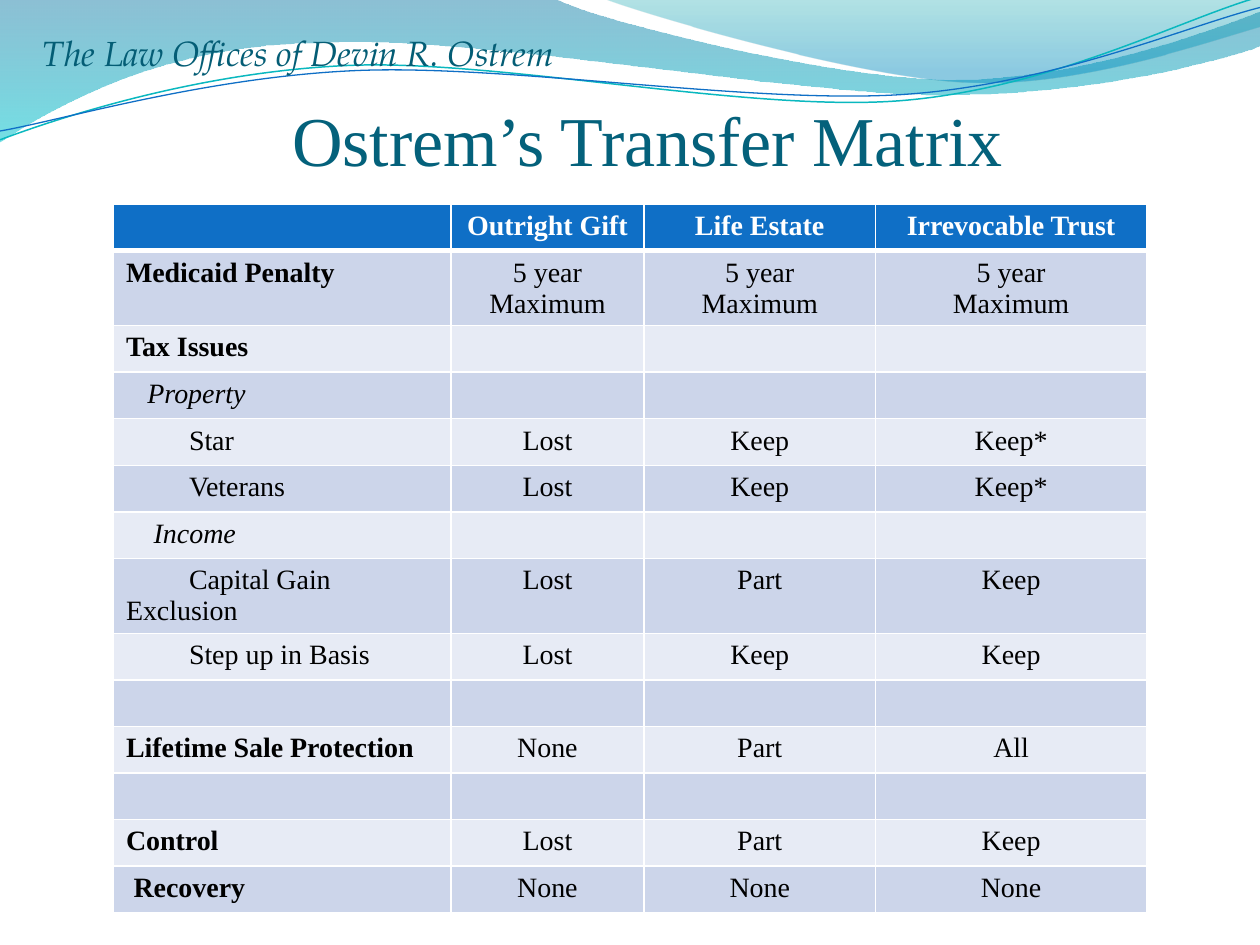
"""Builds a slide with a transfer matrix table under a wave header."""
from math import cos, radians, sin

from lxml.etree import SubElement
from pptx import Presentation
from pptx.dml.color import RGBColor
from pptx.enum.text import MSO_ANCHOR as Anchor, MSO_AUTO_SIZE as AutoSize, PP_ALIGN as Align
from pptx.oxml.ns import qn
from pptx.util import Inches, Pt


def rgb(value):
    return RGBColor.from_string(value)


def add_wave(shapes, start, segments, closed, tilt=0, center=(0, 0)):
    """Draw straight (1 point) and cubic (3 point) segments as one freeform."""
    angle, (cx, cy) = radians(-tilt), center
    points = [(1000 * (cx + (x - cx) * cos(angle) - (y - cy) * sin(angle)),
               1000 * (cy + (x - cx) * sin(angle) + (y - cy) * cos(angle)))
              for x, y in [start, *(point for segment in segments for point in segment)]]
    builder = shapes.build_freeform(*points[0], scale=Inches(1) / 1000)
    builder.add_line_segments(points[1:], close=closed)
    wave = builder.convert_to_shape()
    lines = iter(list(wave._element.iter(qn("a:lnTo"))))
    for segment in segments:
        first = next(lines)
        if len(segment) == 3:
            first.tag = qn("a:cubicBezTo")
            for control in (next(lines), next(lines)):
                first.append(control[0])
                control.getparent().remove(control)
    wave.rotation = tilt
    wave.shadow.inherit = False
    return wave


prs = Presentation()
prs.slide_width, prs.slide_height = Inches(10), Inches(7.5)
slide = prs.slides.add_slide(prs.slide_layouts[5])
shapes = slide.shapes

bands = [
    ((0, -0.01), [
        [(4.4, -0.01)], [(4.76, 0.17), (6.64, 0.63), (7.58, 0.63)],
        [(8.53, 0.63), (9.58, 0.26), (10, 0.09)], [(10.01, 0.36)],
        [(9.83, 0.44), (8.7, 0.76), (7.46, 0.75)],
        [(6.22, 0.75), (3.82, 0.28), (2.57, 0.34)],
        [(1.29, 0.35), (0.46, 0.83), (-0.01, 1.13)], [(0, -0.01)],
    ], [(0, "0074A1", 45), (1, "00C6CF", 55)]),
    ((4.79, -0.01), [
        [(5.09, 0.11), (6.82, 0.62), (7.69, 0.65)],
        [(8.56, 0.69), (9.61, 0.32), (10, 0.21)], [(10, 0)], [(4.79, -0.01)],
    ], [(0, "00A1A9", 30), (0.8, "008BBF", 45)]),
]
for start, segments, stops in bands:
    band = add_wave(shapes, start, segments, True)
    band.line.fill.background()
    band.fill.gradient()
    band.fill.gradient_angle = 270
    for stop, (position, color, _) in zip(band.fill.gradient_stops, stops):
        stop.position = position
        stop.color.rgb = rgb(color)
    colors = band._element.spPr.iter(qn("a:srgbClr"))
    for element, (_, _, opacity) in zip(list(colors), stops):
        SubElement(element, qn("a:alpha")).set("val", str(opacity * 1000))

strands = [
    ((0, 1.11), [[(0.48, 0.93), (1.58, 0.57), (2.77, 0.52)],
                 [(3.95, 0.47), (5.93, 0.89), (7.13, 0.8)],
                 [(8.33, 0.71), (9.38, 0.15), (9.98, -0.02)]], (4.99, 0.58), "0AB8BF", 0.85),
    ((0, 1.04), [[(0.47, 0.96), (1.64, 0.61), (2.83, 0.56)],
                 [(4.03, 0.51), (5.97, 0.83), (7.17, 0.75)],
                 [(8.36, 0.67), (9.41, 0.21), (10, 0.06)]], (5, 0.59), "0F6FC6", 0.75),
]
for start, segments, center, color, width in strands:
    strand = add_wave(shapes, start, segments, False, -2.7, center)
    strand.fill.background()
    strand.line.color.rgb = rgb(color)
    strand.line.width = Pt(width)

title = shapes.title
shapes._spTree.append(title._element)
title.left, title.top, title.width, title.height = map(Inches, (1.32, 0.71, 7.42, 0.75))
title.text_frame.text = "Ostrem’s Transfer Matrix"
firm = shapes.add_textbox(Inches(0.2), Inches(0.1), Inches(4.83), Inches(0.48))
firm.text_frame.text = "The Law Offices of Devin R. Ostrem"
for heading, indent, bottom, name, size, color, italic in (
    (title, 1, 0.03, "Times New Roman", 40, "04617B", False),
    (firm, 0.14, 0, "TeX Gyre Pagella", 20, "045D75", True),
):
    frame = heading.text_frame
    frame.word_wrap, frame.auto_size = True, AutoSize.NONE
    frame.vertical_anchor = Anchor.BOTTOM
    frame.margin_left, frame.margin_bottom = Inches(indent), Inches(bottom)
    frame.margin_top = frame.margin_right = 0
    paragraph = frame.paragraphs[0]
    paragraph.alignment = Align.LEFT
    font = paragraph.font
    font.name, font.size, font.italic = name, Pt(size), italic
    font.color.rgb = rgb(color)

blank = ["", "", ""]
rows = [
    ("", 0, "bold", ["Outright Gift", "Life Estate", "Irrevocable Trust"]),
    ("Medicaid Penalty", 0, "bold", ["5 year Maximum", "5 year\vMaximum", "5 year\vMaximum"]),
    ("Tax Issues", 0, "bold", blank),
    ("Property", 0.17, "italic", blank),
    ("Star", 0.5, "", ["Lost", "Keep", "Keep*"]),
    ("Veterans", 0.5, "", ["Lost", "Keep", "Keep*"]),
    ("Income", 0.22, "italic", blank),
    ("Capital Gain Exclusion", 0.5, "", ["Lost", "Part", "Keep"]),
    ("Step up in Basis", 0.5, "", ["Lost", "Keep", "Keep"]),
    ("", 0, "", blank),
    ("Lifetime Sale Protection", 0, "bold", ["None", "Part", "All"]),
    ("", 0, "", blank),
    ("Control", 0, "bold", ["Lost", "Part", "Keep"]),
    ("Recovery", 0.06, "bold", ["None", "None", "None"]),
]
matrix = shapes.add_table(len(rows), 4, Inches(0.9), Inches(1.62), Inches(8.2), Inches(5.62)).table
for column, width in zip(matrix.columns, (2.68, 1.53, 1.84, 2.15)):
    column.width = Inches(width)
for r, (label, indent, style, values) in enumerate(rows):
    two_lines = label in ("Medicaid Penalty", "Capital Gain Exclusion")
    matrix.rows[r].height = Inches(0.59 if two_lines else 0.37)
    for c, text in enumerate([label, *values]):
        cell = matrix.cell(r, c)
        if r == 0:
            rule = SubElement(cell._tc.get_or_add_tcPr(), qn("a:lnB"), w=str(Pt(3)))
            SubElement(SubElement(rule, qn("a:solidFill")), qn("a:srgbClr"), val="FFFFFF")
        cell.fill.solid()
        cell.fill.fore_color.rgb = rgb("0F6FC6" if r == 0 else ("E7EBF5", "CCD5EA")[r % 2])
        cell.text_frame.text = text
        paragraph = cell.text_frame.paragraphs[0]
        paragraph.alignment = Align.CENTER if c else Align.LEFT
        if c == 0 and indent:
            paragraph._p.get_or_add_pPr().set("indent", str(Inches(indent)))
        if not text:
            SubElement(paragraph._p, qn("a:endParaRPr")).set("sz", "1600")
        font = paragraph.font
        font.name, font.size = "Times New Roman", Pt(16)
        font.bold = r == 0 or (c == 0 and style == "bold")
        font.italic = c == 0 and style == "italic"
        font.color.rgb = rgb("000000" if r else "FFFFFF")

prs.save("out.pptx")
